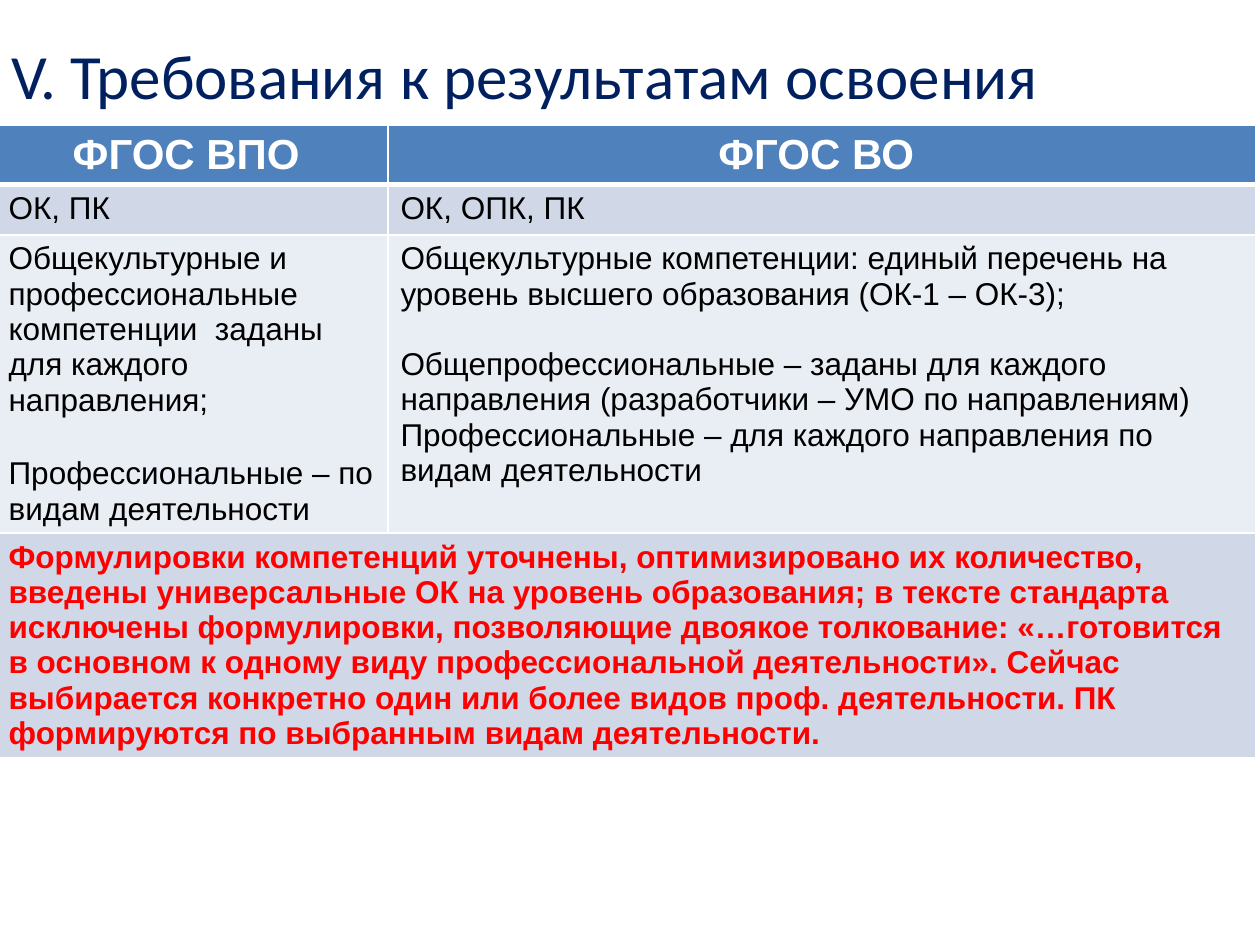
from lxml.etree import SubElement
from pptx import Presentation
from pptx.dml.color import RGBColor
from pptx.enum.text import MSO_ANCHOR, MSO_AUTO_SIZE, PP_ALIGN
from pptx.oxml.ns import qn
from pptx.util import Cm, Pt

WHITE, BLACK, RED, NAVY = "FFFFFF", "000000", "FF0000", "002060"
BLUE, BAND, PALE = "4F81BD", "D0D8E8", "E9EDF4"

WIDTHS = [7.9, 17.5]
HEIGHTS = [1.19, 1.02, 6.01, 4.52]
FILLS = [BLUE, BAND, PALE, BAND]

# Each cell is a list of (text, space before in points).
ROWS = [
    [[("ФГОС ВПО ", 0)], [("ФГОС ВО ", 0)]],
    [[("ОК, ПК", 0)], [("ОК, ОПК, ПК", 0)]],
    [
        [
            ("Общекультурные и профессиональные компетенции  заданы "
             "для каждого направления;", 0),
            ("Профессиональные – по видам деятельности", 22),
        ],
        [
            ("Общекультурные компетенции: единый перечень на уровень "
             "высшего образования (ОК-1 – ОК-3);", 0),
            ("Общепрофессиональные – заданы для каждого направления "
             "(разработчики – УМО по направлениям)", 20),
            ("Профессиональные – для каждого направления по видам "
             "деятельности", 0),
        ],
    ],
    [[
        ("Формулировки компетенций уточнены, оптимизировано их количество, "
         "введены универсальные ОК на уровень образования; в тексте стандарта "
         "исключены формулировки, позволяющие двоякое толкование: «…готовится "
         "в основном к одному виду профессиональной деятельности». Сейчас "
         "выбирается конкретно один или более видов проф. деятельности. ПК "
         "формируются по выбранным видам деятельности.", 0),
    ]],
]


def paint(font, name, size, color, bold=False):
    font.name, font.size, font.bold = name, Pt(size), bold
    font.color.rgb = RGBColor.from_string(color)


def add_title(slide, text):
    title = slide.shapes.title
    title.left, title.top = Cm(-0.03), Cm(0.53)
    title.width, title.height = Cm(24.8), Cm(15.7)
    frame = title.text_frame
    frame.text = text
    frame.word_wrap = True
    frame.auto_size = MSO_AUTO_SIZE.NONE
    frame.vertical_anchor = MSO_ANCHOR.TOP
    frame.margin_top = Cm(0.2)
    line = frame.paragraphs[0]
    line.alignment = PP_ALIGN.LEFT
    paint(line.runs[0].font, "Calibri", 36, NAVY)


def set_edges(cell, widths):
    """Draw white borders; widths maps an edge letter to points."""
    props = cell._tc.get_or_add_tcPr()
    for index, (edge, width) in enumerate(widths.items()):
        line = props.makeelement(qn(f"a:ln{edge}"), {"w": str(Pt(width))})
        fill = SubElement(line, qn("a:solidFill"))
        SubElement(fill, qn("a:srgbClr"), val=WHITE)
        props.insert(index, line)


def fill_cell(cell, lines, size, color, bold, align):
    frame = cell.text_frame
    frame.text = "\n".join(text for text, gap in lines)
    for para, (text, gap) in zip(frame.paragraphs, lines):
        para.alignment = align
        para.space_before = Pt(gap)
        paint(para.runs[0].font, "Arial", size, color, bold)


def add_grid(slide):
    shape = slide.shapes.add_table(
        len(ROWS), len(WIDTHS), Cm(-0.08), Cm(2.52),
        Cm(sum(WIDTHS)), Cm(sum(HEIGHTS)))
    table = shape.table
    for column, width in zip(table.columns, WIDTHS):
        column.width = Cm(width)
    last = len(ROWS) - 1
    table.cell(last, 0).merge(table.cell(last, 1))

    for r, (cells, height) in enumerate(zip(ROWS, HEIGHTS)):
        table.rows[r].height = Cm(height)
        head = r == 0
        size = 24 if head else 18
        color = WHITE if head else RED if r == last else BLACK
        align = PP_ALIGN.CENTER if head else PP_ALIGN.LEFT
        edges = {"L": 1, "R": 1, "T": 3 if r == 1 else 1, "B": 3 if head else 1}
        for cell in table.rows[r].cells:
            cell.fill.solid()
            cell.fill.fore_color.rgb = RGBColor.from_string(FILLS[r])
            set_edges(cell, edges)
        for c, lines in enumerate(cells):
            fill_cell(table.cell(r, c), lines, size, color,
                      head or r == last, align)


def main():
    deck = Presentation()
    deck.slide_width, deck.slide_height = Cm(25.4), Cm(19.05)
    slide = deck.slides.add_slide(deck.slide_layouts[5])
    add_title(slide, "V. Требования к результатам освоения")
    add_grid(slide)
    deck.save("out.pptx")


if __name__ == "__main__":
    main()
